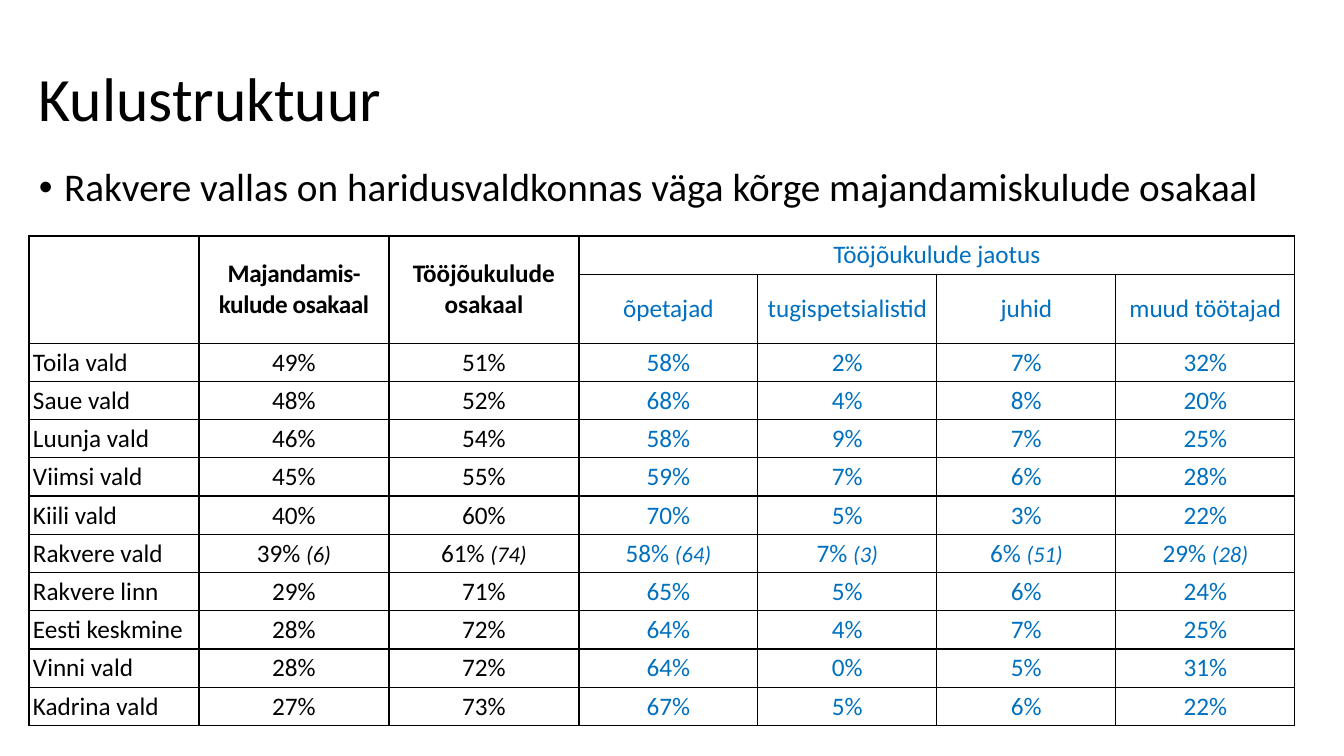
from lxml.etree import SubElement
from pptx import Presentation
from pptx.dml.color import RGBColor
from pptx.enum.text import MSO_ANCHOR as Anchor, PP_ALIGN as Align
from pptx.oxml.ns import qn
from pptx.util import Emu, Pt

FONT = "Calibri"
BLACK, BLUE = "000000", "0070C0"
CELL_INSET = 4
ROW_HEIGHT = 38
COLUMN_WIDTHS = [170, 190, 190] + [179] * 4
FIRST_BLUE_COLUMN = 3
STAFF = ["õpetajad", "tugispetsialistid", "juhid", "muud töötajad"]
# Municipality, then shares in percent in column order
SHARES = [
    ("Toila vald", 49, 51, 58, 2, 7, 32),
    ("Saue vald", 48, 52, 68, 4, 8, 20),
    ("Luunja vald", 46, 54, 58, 9, 7, 25),
    ("Viimsi vald", 45, 55, 59, 7, 6, 28),
    ("Kiili vald", 40, 60, 70, 5, 3, 22),
    ("Rakvere vald", 39, 61, 58, 7, 6, 29),
    ("Rakvere linn", 29, 71, 65, 5, 6, 24),
    ("Eesti keskmine", 28, 72, 64, 4, 7, 25),
    ("Vinni vald", 28, 72, 64, 0, 5, 31),
    ("Kadrina vald", 27, 73, 67, 5, 6, 22),
]
# Second figure shown in brackets after each share
BRACKETED = {"Rakvere vald": (6, 74, 64, 3, 51, 28)}


def px(count):
    return Emu(round(count * 914400 / 100.8))


def color(value):
    return RGBColor.from_string(value)


def add_run(paragraph, text, size, ink=BLACK, bold=False, italic=False):
    run = paragraph.add_run()
    run.text = text
    font = run.font
    font.name, font.size, font.bold, font.italic = FONT, Pt(size), bold, italic
    font.color.rgb = color(ink)
    return run


def add_text(slide, box, text, size, anchor):
    frame = slide.shapes.add_textbox(*map(px, box)).text_frame
    frame.word_wrap = True
    frame.vertical_anchor = anchor
    paragraph = frame.paragraphs[0]
    paragraph.line_spacing = 0.9
    add_run(paragraph, text, size)
    return paragraph


def add_bullet(paragraph):
    paragraph.space_before = Pt(10)
    properties = paragraph._p.get_or_add_pPr()
    properties.set("marL", "228600")
    properties.set("indent", "-228600")
    SubElement(properties, qn("a:buFont"), typeface="Arial")
    SubElement(properties, qn("a:buChar"), char="•")


def style_cell(cell):
    cell.margin_left = cell.margin_right = px(CELL_INSET)
    cell.margin_top = cell.margin_bottom = px(CELL_INSET)
    cell.vertical_anchor = Anchor.MIDDLE
    properties = cell._tc.get_or_add_tcPr()
    for side in ("a:lnL", "a:lnR", "a:lnT", "a:lnB"):
        border = SubElement(properties, qn(side), w=str(Pt(1)))
        ink = SubElement(border, qn("a:solidFill"))
        SubElement(ink, qn("a:srgbClr"), val=BLACK)
    cell.fill.background()


def write_cell(cell, text, ink=BLACK, bold=False, align=Align.CENTER):
    paragraph = cell.text_frame.paragraphs[0]
    paragraph.alignment = align
    return add_run(paragraph, text, 18, ink, bold)


def add_cost_table(slide, left, top):
    row_heights = [ROW_HEIGHT, 69] + [ROW_HEIGHT] * len(SHARES)
    table = slide.shapes.add_table(
        len(row_heights), len(COLUMN_WIDTHS), px(left), px(top),
        px(sum(COLUMN_WIDTHS)), px(sum(row_heights))).table
    table.first_row = table.horz_banding = False
    for column, width in zip(table.columns, COLUMN_WIDTHS):
        column.width = px(width)
    for row, height in zip(table.rows, row_heights):
        row.height = px(height)
    for cell in table.iter_cells():
        style_cell(cell)
    fill_header(table)
    fill_shares(table)


def fill_header(table):
    for column in range(FIRST_BLUE_COLUMN):
        table.cell(0, column).merge(table.cell(1, column))
    table.cell(0, FIRST_BLUE_COLUMN).merge(table.cell(0, len(COLUMN_WIDTHS) - 1))
    upkeep = write_cell(table.cell(0, 1), "Majandamis-kulude osakaal", bold=True)
    upkeep.font._element.set("spc", "-30")
    write_cell(table.cell(0, 2), "Tööjõukulude osakaal", bold=True)
    write_cell(table.cell(0, FIRST_BLUE_COLUMN), "Tööjõukulude jaotus", BLUE)
    for column, role in enumerate(STAFF, FIRST_BLUE_COLUMN):
        write_cell(table.cell(1, column), role, BLUE)


def fill_shares(table):
    for row, (municipality, *shares) in enumerate(SHARES, 2):
        name_cell = table.cell(row, 0)
        name_cell.vertical_anchor = Anchor.TOP
        write_cell(name_cell, municipality, align=Align.LEFT)
        bracketed = BRACKETED.get(municipality)
        for column, share in enumerate(shares, 1):
            cell = table.cell(row, column)
            ink = BLUE if column >= FIRST_BLUE_COLUMN else BLACK
            write_cell(cell, f"{share}% " if bracketed else f"{share}%", ink)
            if bracketed:
                add_run(cell.text_frame.paragraphs[0],
                        f"({bracketed[column - 1]})", 16, ink, italic=True)


def main():
    deck = Presentation()
    deck.slide_width, deck.slide_height = px(1344), px(756)
    slide = deck.slides.add_slide(deck.slide_layouts[6])

    # Title and key message
    add_text(slide, (29, 40, 1266, 123), "Kulustruktuur", 44, Anchor.MIDDLE)
    message = add_text(
        slide, (29, 163, 1266, 54),
        "Rakvere vallas on haridusvaldkonnas väga kõrge majandamiskulude osakaal",
        28, Anchor.TOP)
    add_bullet(message)

    # Cost shares by municipality
    add_cost_table(slide, 29, 236)
    deck.save("out.pptx")


if __name__ == "__main__":
    main()
